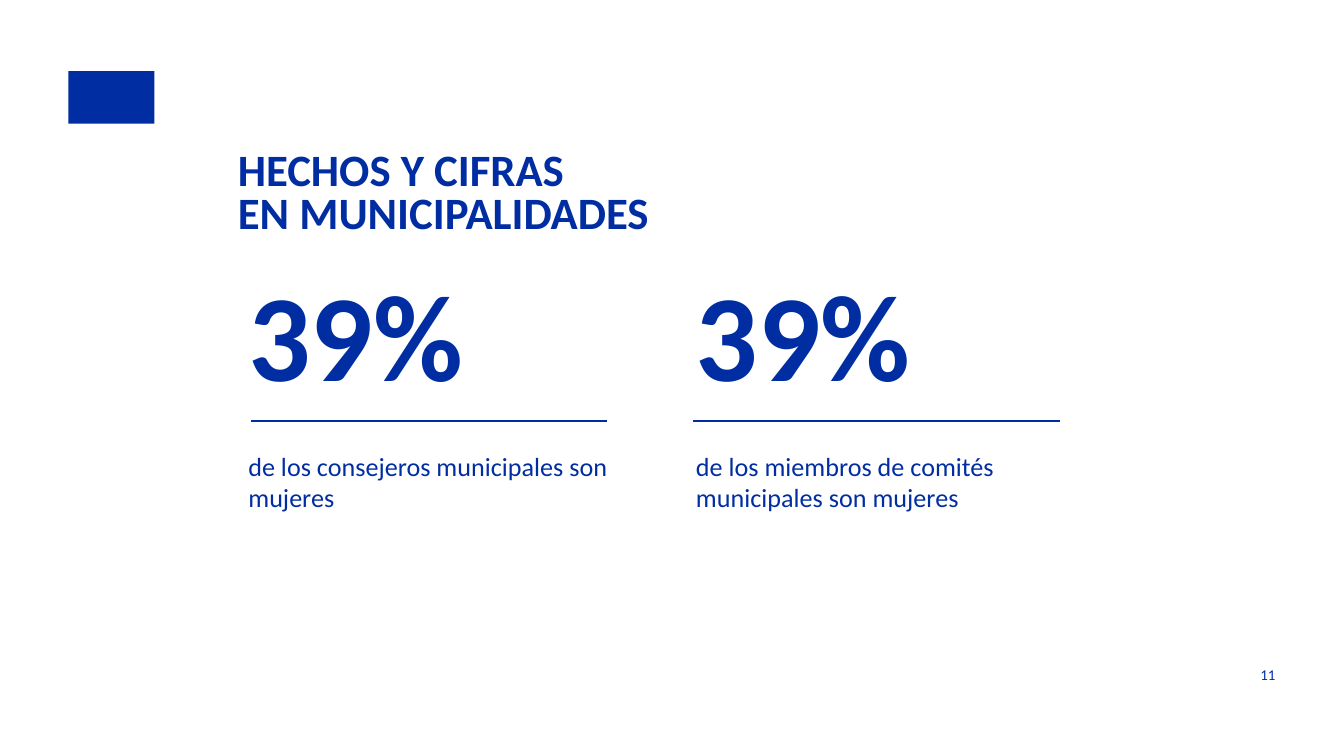
from dataclasses import dataclass

from lxml import etree
from pptx import Presentation
from pptx import util as u
from pptx.dml.color import RGBColor
from pptx.enum import shapes, text
from pptx.oxml.ns import qn


@dataclass(frozen=True)
class Theme:
    blue: RGBColor = RGBColor(0x00, 0x2E, 0xA2)
    font: str = "Calibri"
    title: int = 24
    figure: int = 66
    body: int = 14
    number: int = 8


theme = Theme()


def format_paragraph(p, size, bold=False):
    p.font.name = theme.font
    p.font.size = u.Pt(size)
    p.font.bold = bold
    p.font.color.rgb = theme.blue


def add_text(slide, words, box, size, bold=False):
    sp = slide.shapes.add_textbox(*map(u.Inches, box))
    tf = sp.text_frame
    tf.word_wrap = True
    tf.paragraphs[0].text = words
    format_paragraph(tf.paragraphs[0], size, bold)
    return tf


prs = Presentation()
prs.slide_width = u.Inches(10)
prs.slide_height = u.Inches(10 * 9 / 16)
s = prs.slides.add_slide(prs.slide_layouts[5])

# Plain block in the emblem's place
emblem = s.shapes.add_shape(
    shapes.MSO_SHAPE.RECTANGLE,
    u.Inches(0.51), u.Inches(0.53), u.Inches(0.64), u.Inches(0.39))
emblem.shadow.inherit = False
emblem.fill.solid()
emblem.fill.fore_color.rgb = theme.blue
emblem.line.fill.background()

# Title
title = s.shapes.title
title.left, title.top = u.Inches(1.77), u.Inches(1.06)
title.width, title.height = u.Inches(7.32), u.Inches(0.71)
tf = title.text_frame
tf.margin_left = tf.margin_top = tf.margin_right = tf.margin_bottom = 0
tf.vertical_anchor = text.MSO_ANCHOR.BOTTOM
tf.auto_size = text.MSO_AUTO_SIZE.NONE
p = tf.paragraphs[0]
p.add_run().text = "HECHOS Y CIFRAS"
p.add_line_break()
p.add_run().text = "EN MUNICIPALIDADES"
p.alignment = text.PP_ALIGN.LEFT
p.line_spacing = 0.8
format_paragraph(p, theme.title, bold=True)

# Columns: left edge, caption width, rule start and end, figure, caption
columns = [
    (1.75, 2.9, 1.87, 4.52, "39%", "de los consejeros municipales son mujeres"),
    (5.08, 2.81, 5.16, 7.89, "39%", "de los miembros de comités municipales son mujeres"),
]
rule_y = u.Inches(3.13)
for left, width, start, end, figure, caption in columns:
    add_text(s, figure, (left, 1.87, 2.27, 1.21), theme.figure, bold=True)
    add_text(s, caption, (left, 3.3, width, 0.57), theme.body)
    rule = s.shapes.add_connector(
        shapes.MSO_CONNECTOR.STRAIGHT, u.Inches(start), rule_y, u.Inches(end), rule_y)
    rule.line.color.rgb = theme.blue
    rule.line.width = u.Pt(1)
    etree.SubElement(rule.element.spPr, qn("a:effectLst"))

# Page number
tf = add_text(s, "11", (8.7, 4.94, 0.79, 0.16), theme.number)
tf.margin_left = tf.margin_top = tf.margin_right = tf.margin_bottom = 0
tf.vertical_anchor = text.MSO_ANCHOR.MIDDLE
tf.paragraphs[0].alignment = text.PP_ALIGN.RIGHT

prs.save("out.pptx")
